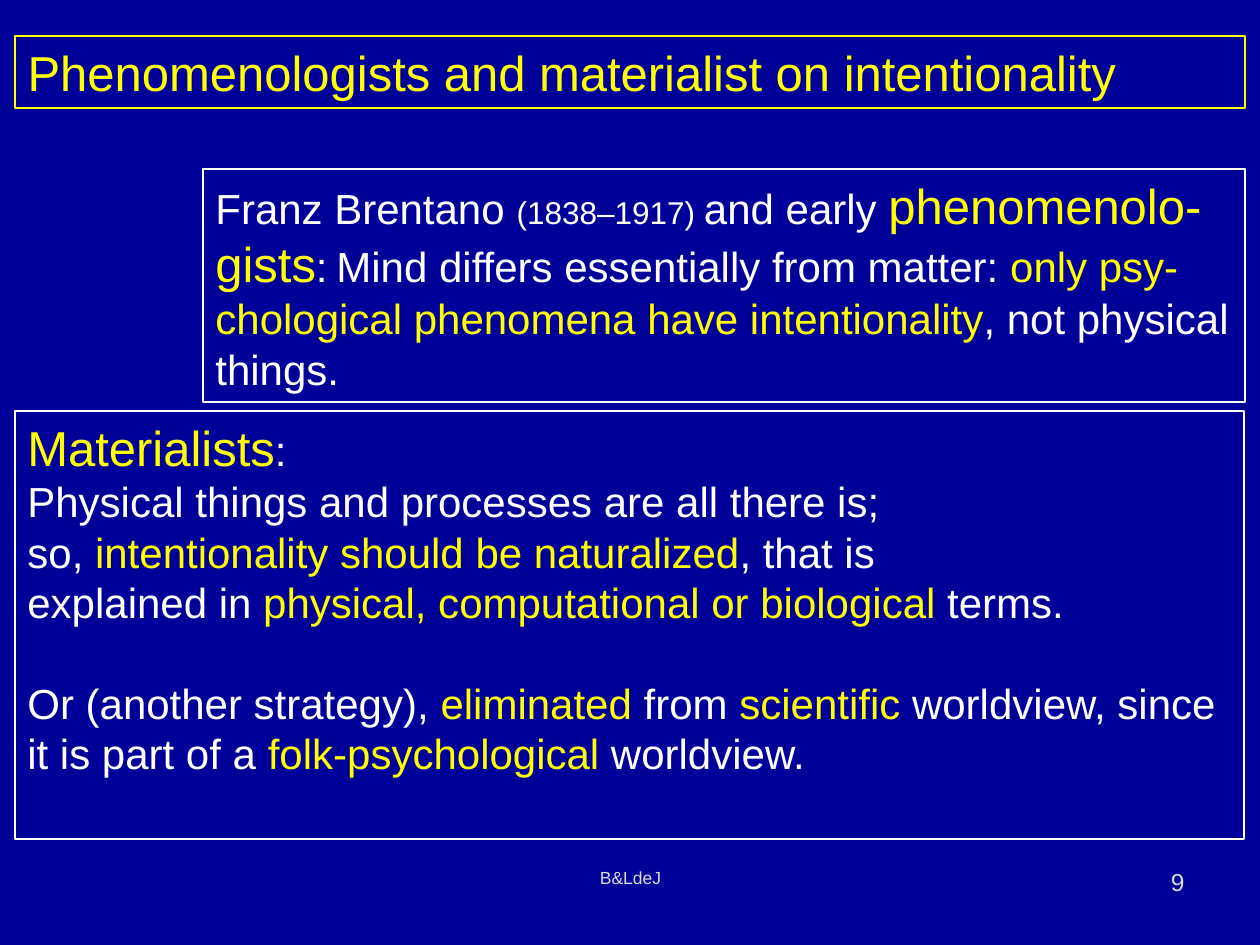
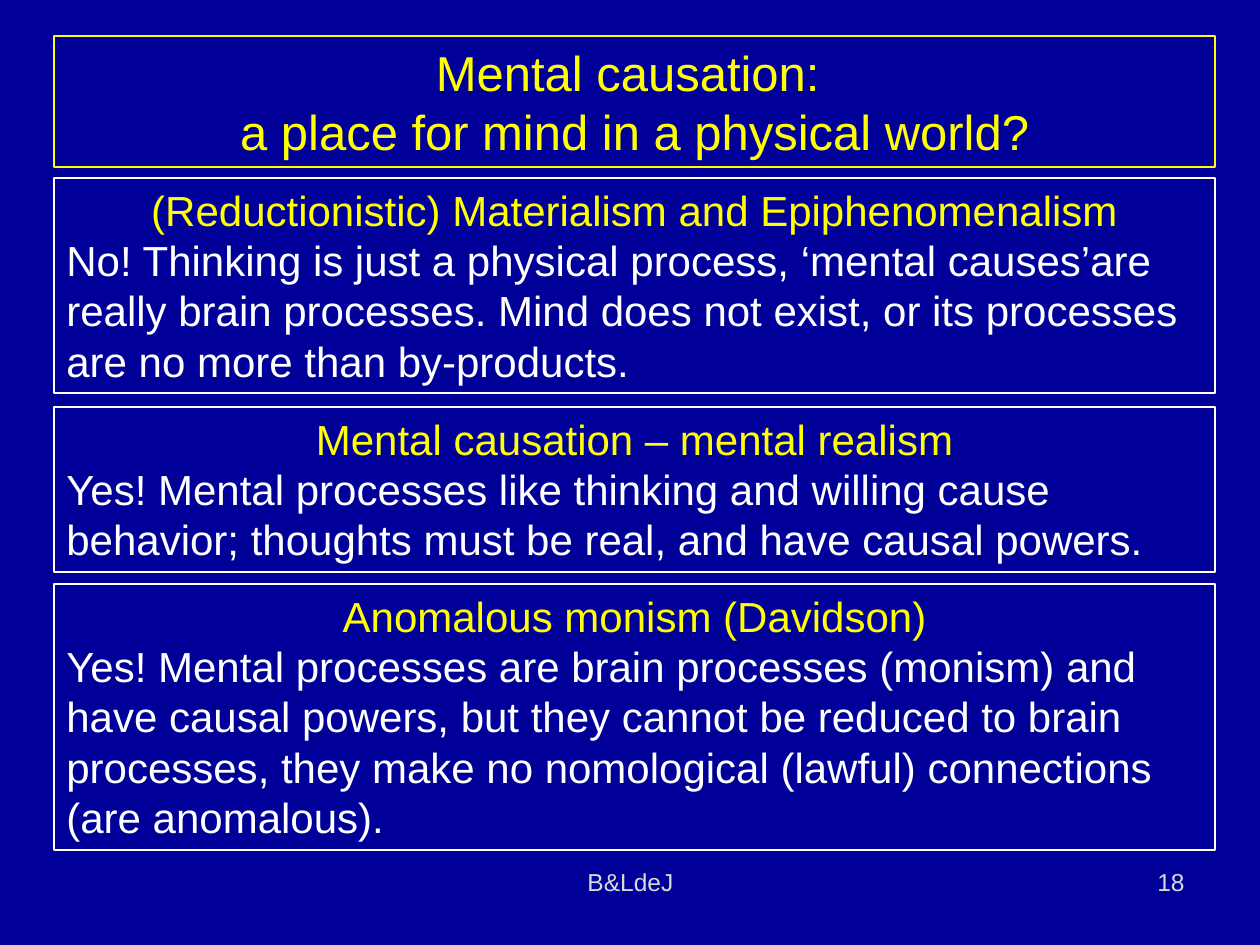
"""Build two slides on intentionality and mental causation."""
from dataclasses import dataclass
from typing import NamedTuple

from pptx import Presentation
from pptx import util as u
from pptx.dml import color
from pptx.enum import shapes, text

SCALE = 914400 / 126
FONT = "Arial"
NAVY, WHITE, GOLD, GREY = "000099", "FFFFFF", "FFFF00", "D9D9D9"
LEAD = 1.2
LEFT, MID, RIGHT = text.PP_ALIGN.LEFT, text.PP_ALIGN.CENTER, text.PP_ALIGN.RIGHT


class Run(NamedTuple):
    words: str
    tint: str = WHITE
    size: int = 24


class Para(NamedTuple):
    runs: list[Run]
    align: int = LEFT
    gap: float = 0


class Area(NamedTuple):
    left: int
    top: int
    width: int
    height: int


@dataclass
class Box:
    area: Area
    paras: list[Para]


@dataclass
class Page:
    title: Box
    boxes: list[Box]
    number: str
    foot: int


def px(count: int) -> int:
    return round(count * SCALE)


def rgb(tint: str) -> color.RGBColor:
    return color.RGBColor.from_string(tint)


def head(words: str) -> Run:
    return Run(words, GOLD, 28)


def gold(words: str) -> Run:
    return Run(words, GOLD)


def write(frame, paras: list[Para]) -> None:
    frame.word_wrap = True
    frame.auto_size = text.MSO_AUTO_SIZE.NONE
    frame.vertical_anchor = text.MSO_ANCHOR.TOP
    for num, item in enumerate(paras):
        para = frame.add_paragraph() if num else frame.paragraphs[0]
        para.alignment = item.align
        para.line_spacing = u.Pt(LEAD * max(run.size for run in item.runs))
        para.space_before = u.Pt(item.gap)
        for part in item.runs:
            run = para.add_run()
            run.text = part.words
            run.font.name = FONT
            run.font.size = u.Pt(part.size)
            run.font.color.rgb = rgb(part.tint)


def frame_box(shape, tint: str, paras: list[Para]) -> None:
    shape.fill.background()
    shape.line.color.rgb = rgb(tint)
    shape.line.width = u.Pt(0.75)
    write(shape.text_frame, paras)


def draw_box(slide, box: Box) -> None:
    shape = slide.shapes.add_shape(shapes.MSO_SHAPE.RECTANGLE, *map(px, box.area))
    shape.shadow.inherit = False
    frame_box(shape, WHITE, box.paras)


def draw_title(slide, box: Box) -> None:
    shape = slide.shapes.title
    shape.left, shape.top, shape.width, shape.height = map(px, box.area)
    frame_box(shape, GOLD, box.paras)


def draw_foot(slide, area: Area, run: Run, align: int) -> None:
    shape = slide.shapes.add_textbox(*map(px, area))
    write(shape.text_frame, [Para([run], align)])


def draw_page(deck, page: Page) -> None:
    slide = deck.slides.add_slide(deck.slide_layouts[5])
    draw_foot(slide, Area(431, 861, 399, 65), Run("B&LdeJ", GREY, page.foot), MID)
    draw_foot(slide, Area(903, 861, 294, 65), Run(page.number, GREY, 14), RIGHT)
    for box in page.boxes:
        draw_box(slide, box)
    draw_title(slide, page.title)


def view(top: int, height: int, name: str, words: str) -> Box:
    return Box(Area(54, top, 1161, height),
               [Para([gold(name)], MID), Para([Run(words)])])


PAGES = [
    Page(
        Box(Area(15, 36, 1230, 72),
            [Para([head("Phenomenologists and materialist on intentionality")])]),
        [
            Box(Area(203, 169, 1042, 233), [
                Para([Run("Franz Brentano "), Run("(1838–1917) ", WHITE, 18),
                      Run("and early "), head("phenomenolo-")]),
                Para([head("gists"), Run(":"), Run(" ", WHITE, 18),
                      Run("Mind differs essentially from matter: "),
                      gold("only psy-")]),
                Para([gold("chological phenomena have intentionality"),
                      Run(", not physical")]),
                Para([Run("things.")]),
            ]),
            Box(Area(15, 411, 1229, 428), [
                Para([head("Materialists"), Run(":")]),
                Para([Run("Physical things and processes are all there is;")]),
                Para([Run("so, "), gold("intentionality should be naturalized"),
                      Run(", that is")]),
                Para([Run("explained in "),
                      gold("physical, computational or biological "),
                      Run("terms.")]),
                Para([Run("Or (another strategy), "), gold("eliminated"),
                      Run(" from "), gold("scientific"),
                      Run(" worldview, since it is part of a "),
                      gold("folk-psychological"), Run(" worldview.")],
                     gap=24 * LEAD),
            ]),
        ],
        "9", 10),
    Page(
        Box(Area(54, 36, 1161, 131), [
            Para([head("Mental causation: ")], MID),
            Para([head("a place for mind in a physical world?")], MID),
        ]),
        [
            view(178, 215, "(Reductionistic) Materialism and Epiphenomenalism",
                 "No! Thinking is just a physical process, ‘mental causes’are "
                 "really brain processes. Mind does not exist, or its processes "
                 "are no more than by-products."),
            view(407, 165, "Mental causation – mental realism",
                 "Yes! Mental processes like thinking and willing cause "
                 "behavior; thoughts must be real, and have causal powers."),
            view(584, 266, "Anomalous monism (Davidson)",
                 "Yes! Mental processes are brain processes (monism) and "
                 "have causal powers, but they cannot be reduced to brain "
                 "processes, they make no nomological (lawful) connections "
                 "(are anomalous)."),
        ],
        "18", 14),
]


def main() -> None:
    deck = Presentation()
    deck.slide_width, deck.slide_height = px(1260), px(945)
    back = deck.slide_master.background.fill
    back.solid()
    back.fore_color.rgb = rgb(NAVY)
    for page in PAGES:
        draw_page(deck, page)
    deck.save("out.pptx")


if __name__ == "__main__":
    main()
